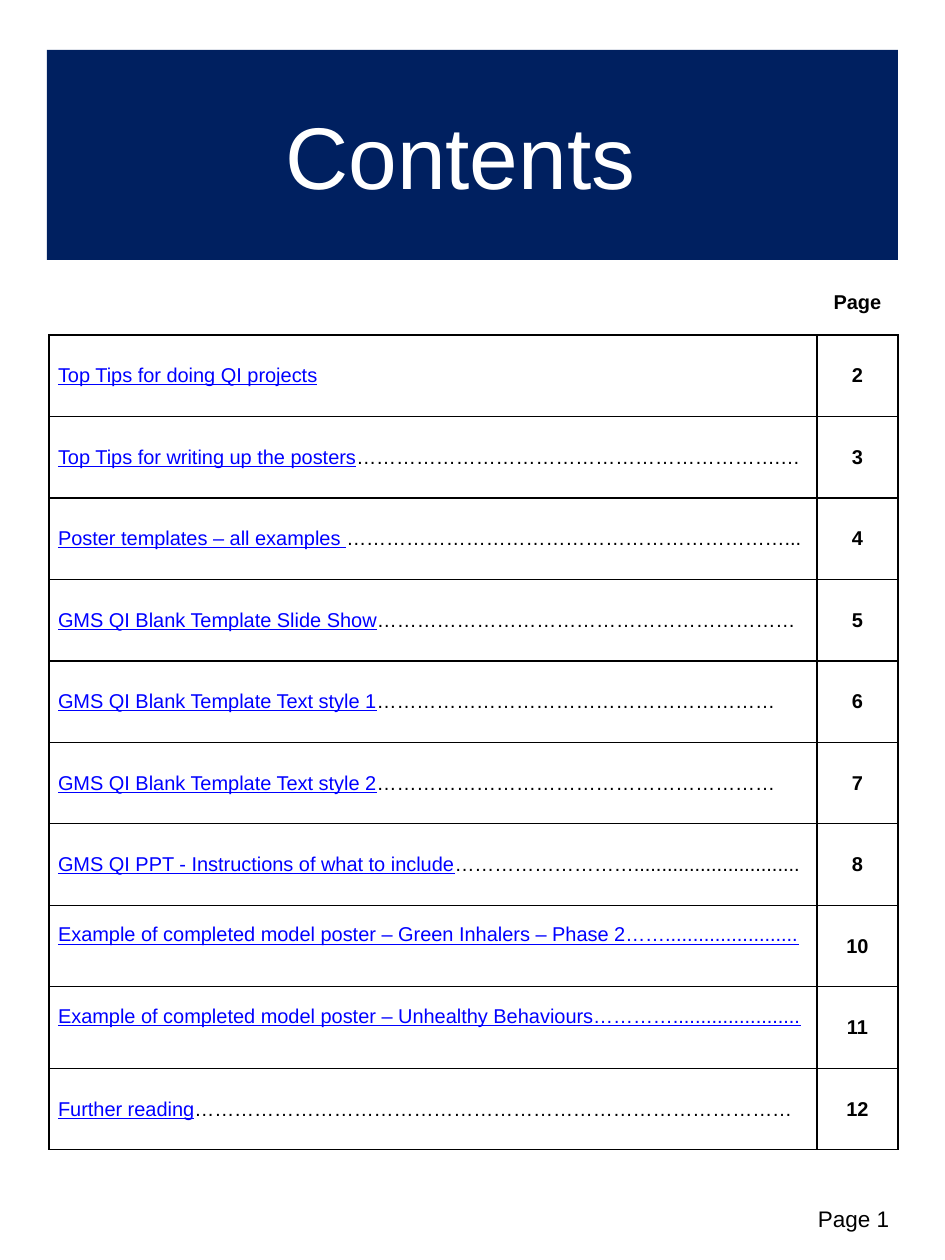
from pptx import Presentation
from pptx.dml.color import RGBColor
from pptx.enum.text import MSO_ANCHOR, MSO_AUTO_SIZE, PP_ALIGN
from pptx.oxml import parse_xml
from pptx.oxml.ns import nsdecls
from pptx.util import Pt

NAVY = RGBColor(0x00, 0x20, 0x60)
WHITE = RGBColor(0xFF, 0xFF, 0xFF)
BLACK = RGBColor(0x00, 0x00, 0x00)
BLUE = RGBColor(0x00, 0x00, 0xFF)
LEFT, CENTER, RIGHT = PP_ALIGN.LEFT, PP_ALIGN.CENTER, PP_ALIGN.RIGHT
MIDDLE = MSO_ANCHOR.MIDDLE
FIXED = MSO_AUTO_SIZE.NONE
FONT = "Arial"
SCALE = 10160
LIFT = 27

ROWS = [
    ("Top Tips for doing QI projects", "", "2", 0),
    ("Top Tips for writing up the posters",
     "……………………………………………………….…", "3", 0),
    ("Poster templates – all examples ",
     "…………………………………………………………...", "4", 0),
    ("GMS QI Blank Template Slide Show",
     "………………………………………………………", "5", 0),
    ("GMS QI Blank Template Text style 1",
     "……………………………………………………", "6", 0),
    ("GMS QI Blank Template Text style 2",
     "……………………………………………………", "7", 0),
    ("GMS QI PPT - Instructions of what to include",
     "………………………..............................", "8", 0),
    ("Example of completed model poster – Green Inhalers – Phase 2……........................",
     "", "10", LIFT),
    ("Example of completed model poster – Unhealthy Behaviours………….......................",
     "", "11", LIFT),
    ("Further reading",
     "………………………………………………………………………………", "12", 0),
]


def px(*nums):
    return [num * SCALE for num in nums]


class Page:
    """Hold the style and the current slide, and draw each kind of element."""

    def __init__(self, deck):
        self.slide = deck.slides.add_slide(deck.slide_layouts[5])

    def style(self, run, size, color, bold=False, line=False):
        font = run.font
        font.name, font.size, font.bold, font.underline = FONT, Pt(size), bold, line
        font.color.rgb = color

    def title(self, text, box, size):
        shape = self.slide.shapes.title
        shape.left, shape.top, shape.width, shape.height = px(*box)
        shape.fill.solid()
        shape.fill.fore_color.rgb = NAVY
        frame = shape.text_frame
        frame.text = text
        frame.auto_size = FIXED
        frame.vertical_anchor = MIDDLE
        frame.margin_left, frame.margin_right = px(41, 41)
        frame.margin_top, frame.margin_bottom = px(21, 21)
        para = frame.paragraphs[0]
        para.alignment = CENTER
        self.style(para.runs[0], size, WHITE)

    def label(self, text, box, size):
        frame = self.slide.shapes.add_textbox(*px(*box)).text_frame
        frame.word_wrap = True
        frame.text = text
        para = frame.paragraphs[0]
        para.alignment = RIGHT
        self.style(para.runs[0], size, BLACK)

    def cell(self, cell, runs, align, edges, lift=0):
        cell.vertical_anchor = MIDDLE
        if lift:
            cell.margin_bottom = lift * SCALE
        para = cell.text_frame.paragraphs[0]
        para.alignment = align
        for text, color, bold, line in runs:
            run = para.add_run()
            run.text = text
            self.style(run, 16, color, bold, line)
        props = cell._tc.get_or_add_tcPr()
        for edge in edges:
            props.append(parse_xml(
                f'<a:ln{edge} {nsdecls("a")} w="{Pt(1)}"><a:solidFill>'
                f'<a:srgbClr val="{BLACK}"/></a:solidFill></a:ln{edge}>'))
        cell.fill.background()

    def table(self, rows, box, cols, head):
        frame = self.slide.shapes.add_table(len(rows) + 1, len(cols), *px(*box))
        grid = frame.table
        grid.first_row = grid.horz_banding = False
        for col, width in zip(grid.columns, px(*cols)):
            col.width = width
        step = (box[3] - head) * SCALE // len(rows)
        for row in grid.rows:
            row.height = step
        grid.rows[0].height = head * SCALE
        self.cell(grid.cell(0, 0), [], LEFT, "B")
        self.cell(grid.cell(0, 1), [("Page", BLACK, True, False)], CENTER, "B")
        for spot, (name, dots, page, lift) in enumerate(rows, 1):
            runs = [(name, BLUE, False, True)]
            if dots:
                runs.append((dots, BLACK, False, False))
            self.cell(grid.cell(spot, 0), runs, LEFT, "LRTB", lift)
            self.cell(grid.cell(spot, 1), [(page, BLACK, True, False)], CENTER, "LRTB")


def main():
    deck = Presentation()
    deck.slide_width, deck.slide_height = px(945, 1260)
    page = Page(deck)
    page.title("Contents ", (47, 50, 851, 210), 70)
    page.label("Page 1", (47, 1201, 851, 36), 18)
    page.table(ROWS, (49, 271, 849, 879), (768, 81), 64)
    deck.save("out.pptx")


if __name__ == "__main__":
    main()
